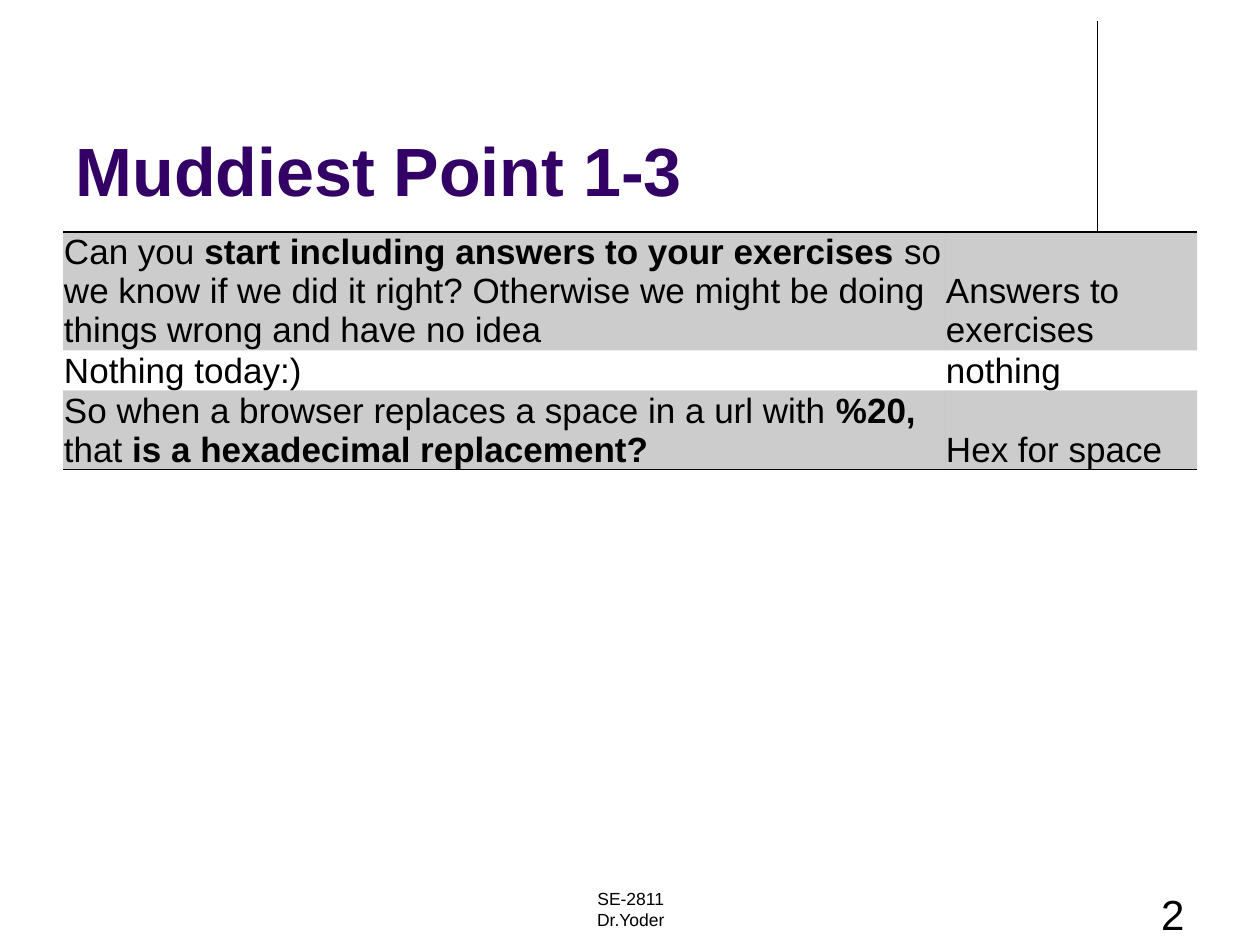
from dataclasses import dataclass

from lxml import etree
from pptx import Presentation
from pptx import util as u
from pptx.dml.color import RGBColor
from pptx.enum import shapes, text
from pptx.oxml.ns import qn


@dataclass(frozen=True)
class Theme:
    font: str = "Arial"
    title: str = "330066"
    ink: str = "000000"
    band_alpha: int = 20
    title_pt: int = 39
    table_pt: int = 20
    footer_pt: int = 10
    number_pt: int = 24


THEME = Theme()
NO_STYLE = "{2D5ABB26-0587-4C30-8999-92F81FD0307C}"

# Each cell is a list of (text, bold) runs
ROWS = [
    ([("Can you ", False),
      ("start including answers to your exercises", True),
      (" so we know if we did it right? Otherwise we might be doing "
       "things wrong and have no idea", False)],
     [("Answers to exercises", False)]),
    ([("Nothing today:)", False)], [("nothing", False)]),
    ([("So when a browser replaces a space in a url with ", False),
      ("%20, ", True), ("that", False),
      (" is a hexadecimal replacement?", True)],
     [("Hex for space", False)]),
]
COL_WIDTHS = (17.78, 5.08)
ROW_HEIGHTS = (2.36, 0.8, 1.58)


def style_font(font, size, color=THEME.ink, bold=False):
    font.name = THEME.font
    font.size = u.Pt(size)
    font.bold = bold
    font.color.rgb = RGBColor.from_string(color)


def set_title(s, title):
    sp = s.shapes.title
    sp.left, sp.top, sp.width, sp.height = map(u.Cm, (1.27, 0.76, 20.96, 3.61))
    tf = sp.text_frame
    tf.text = title
    tf.auto_size = text.MSO_AUTO_SIZE.NONE
    tf.vertical_anchor = text.MSO_ANCHOR.BOTTOM
    p = tf.paragraphs[0]
    p.alignment = text.PP_ALIGN.LEFT
    style_font(p.runs[0].font, THEME.title_pt, THEME.title, True)


def add_rule(s, x, top, bottom):
    line = s.shapes.add_connector(shapes.MSO_CONNECTOR.STRAIGHT,
                                  u.Cm(x), u.Cm(top), u.Cm(x), u.Cm(bottom))
    line.line.color.rgb = RGBColor.from_string(THEME.ink)
    line.line.width = u.Pt(0.75)
    etree.SubElement(line._element.spPr, qn("a:effectLst"))


def add_text(s, box, lines, size, align):
    tf = s.shapes.add_textbox(*map(u.Cm, box)).text_frame
    tf.word_wrap = True
    tf.text = "\n".join(lines)
    for p in tf.paragraphs:
        p.alignment = align
        style_font(p.runs[0].font, size)


def add_border(cell, edge):
    ln = etree.Element(qn(f"a:{edge}"), w=str(u.Pt(1)))
    fill = etree.SubElement(ln, qn("a:solidFill"))
    etree.SubElement(fill, qn("a:srgbClr"), val=THEME.ink)
    cell._tc.get_or_add_tcPr().insert(0, ln)


def fill_cell(cell, runs, banded):
    cell.margin_left = cell.margin_right = cell.margin_top = u.Cm(0.02)
    cell.margin_bottom = 0
    cell.vertical_anchor = text.MSO_ANCHOR.BOTTOM
    p = cell.text_frame.paragraphs[0]
    for words, bold in runs:
        r = p.add_run()
        r.text = words
        style_font(r.font, THEME.table_pt, bold=bold)
    if banded:
        cell.fill.solid()
        cell.fill.fore_color.rgb = RGBColor.from_string(THEME.ink)
        color = cell._tc.tcPr.find(".//" + qn("a:srgbClr"))
        etree.SubElement(color, qn("a:alpha"), val=str(THEME.band_alpha * 1000))
    else:
        cell.fill.background()


def add_question_table(s):
    frame = s.shapes.add_table(len(ROWS), len(COL_WIDTHS), u.Cm(1.27), u.Cm(4.68),
                               u.Cm(sum(COL_WIDTHS)), u.Cm(sum(ROW_HEIGHTS)))
    table = frame.table
    table.first_row = table.horz_banding = False
    table._tbl.tblPr.find(qn("a:tableStyleId")).text = NO_STYLE
    for column, width in zip(table.columns, COL_WIDTHS):
        column.width = u.Cm(width)
    for i, (row, height) in enumerate(zip(table.rows, ROW_HEIGHTS)):
        row.height = u.Cm(height)
        for cell, runs in zip(row.cells, ROWS[i]):
            fill_cell(cell, runs, banded=i % 2 == 0)
            if i == 0:
                add_border(cell, "lnT")
            if i == len(ROWS) - 1:
                add_border(cell, "lnB")


def main():
    prs = Presentation()
    prs.slide_width, prs.slide_height = u.Cm(25.4), u.Cm(19.05)
    s = prs.slides.add_slide(prs.slide_layouts[5])

    # Heading and its vertical rule
    add_rule(s, 22.12, 0.43, 4.65)
    set_title(s, "Muddiest Point 1-3")

    # Student questions with their topics
    add_question_table(s)

    # Footer and page number
    add_text(s, (8.69, 17.78, 8.05, 1.27), ["SE-2811", "Dr.Yoder"],
             THEME.footer_pt, text.PP_ALIGN.CENTER)
    add_text(s, (18.21, 17.78, 5.92, 1.27), ["2"],
             THEME.number_pt, text.PP_ALIGN.RIGHT)

    prs.save("out.pptx")


if __name__ == "__main__":
    main()
